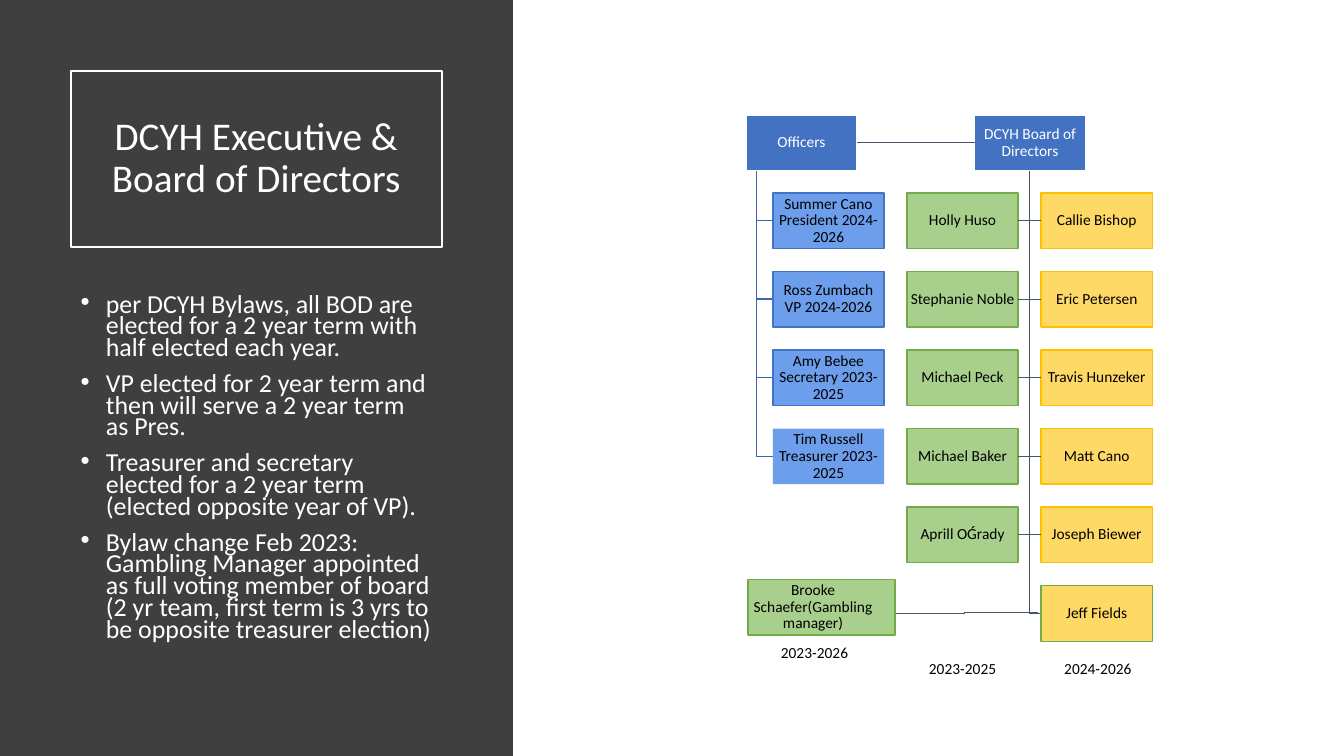
from lxml.etree import SubElement
from pptx import Presentation
from pptx.dml.color import RGBColor
from pptx.enum.shapes import MSO_CONNECTOR, MSO_SHAPE
from pptx.enum.text import MSO_ANCHOR, PP_ALIGN
from pptx.oxml.ns import qn
from pptx.util import Cm, Pt


def paint(shape, fill=None, line=None, weight=1):
    """Set fill, line and no shadow from hex strings; None means invisible."""
    if hasattr(shape, "fill"):
        shape.shadow.inherit = False
        if fill:
            shape.fill.solid()
            shape.fill.fore_color.rgb = RGBColor.from_string(fill)
        else:
            shape.fill.background()
    else:
        SubElement(shape._element.spPr, qn("a:effectLst"))
    if line:
        shape.line.color.rgb = RGBColor.from_string(line)
        shape.line.width = Pt(weight)
    else:
        shape.line.fill.background()


def write(shape, lines, size, color, align, spacing, inset):
    """Write one paragraph per line; inset is left, top, right, bottom in cm."""
    frame = shape.text_frame
    frame.word_wrap = True
    frame.margin_left, frame.margin_top, frame.margin_right, frame.margin_bottom = map(Cm, inset)
    for index, line in enumerate(lines):
        para = frame.add_paragraph() if index else frame.paragraphs[0]
        para.alignment = align
        para.line_spacing = spacing
        span = para.add_run()
        span.text = line
        span.font.name = "Calibri"
        span.font.size = Pt(size)
        span.font.color.rgb = RGBColor.from_string(color)
    return frame


deck = Presentation()
deck.slide_width, deck.slide_height = Cm(33.87), Cm(19.05)
page = deck.slides.add_slide(deck.slide_layouts[6])
shapes = page.shapes

# Left panel
panel = shapes.add_shape(MSO_SHAPE.RECTANGLE, 0, 0, Cm(12.93), deck.slide_height)
paint(panel, "3F3F3F")

title = shapes.add_shape(MSO_SHAPE.RECTANGLE, Cm(1.78), Cm(1.78), Cm(9.35), Cm(4.45))
paint(title, None, "FFFFFF", 1.5)
frame = write(title, ["DCYH Executive & Board of Directors"], 28, "FFFFFF",
              PP_ALIGN.CENTER, 0.9, (0.25, 0.13, 0.25, 0.13))
frame.vertical_anchor = MSO_ANCHOR.MIDDLE

rules = shapes.add_textbox(Cm(1.78), Cm(7.32), Cm(9.35), Cm(9.5))
frame = write(rules, [
    "per DCYH Bylaws, all BOD are elected for a 2 year term with half elected each year.",
    "VP elected for 2 year term and then will serve a 2 year term as Pres.",
    "Treasurer and secretary elected for a 2 year term (elected opposite year of VP).",
    "Bylaw change Feb 2023: Gambling Manager appointed as full voting member of board "
    "(2 yr team, first term is 3 yrs to be opposite treasurer election)",
], 18.5, "FFFFFF", PP_ALIGN.LEFT, 0.7, (0.25, 0.13, 0.25, 0.13))
for para in frame.paragraphs:
    para.space_before = Pt(10)
    props = para._p.get_or_add_pPr()
    props.set("marL", str(Cm(0.64)))
    props.set("indent", str(-Cm(0.64)))
    SubElement(SubElement(props, qn("a:buClr")), qn("a:srgbClr"), val="FFFFFF")
    SubElement(props, qn("a:buFont"), typeface="Arial")
    SubElement(props, qn("a:buChar"), char="•")

# Chart grid
CARD_WIDTH, CARD_HEIGHT = 2.8, 1.4
FIRST_ROW, ROW_STEP = 4.86, 1.98
HEAD_TOP = 2.9
HEAD_BOTTOM = HEAD_TOP + CARD_HEIGHT
OFFICERS_LEFT, GREEN_LEFT, AMBER_LEFT = 19.48, 22.86, 26.24
row_tops = [FIRST_ROW + ROW_STEP * row for row in range(6)]
row_middles = [top + CARD_HEIGHT / 2 for top in row_tops]

# Brackets hanging from the two heads
brackets = [(19.07, middle, OFFICERS_LEFT, "3A66B1", 1) for middle in row_middles[:4]]
brackets.append((25.95, row_middles[5], AMBER_LEFT, "44546A", 0.75))
for x, bottom, right, color, weight in brackets:
    builder = shapes.build_freeform(Cm(x), Cm(HEAD_BOTTOM))
    builder.add_line_segments([(Cm(x), Cm(bottom)), (Cm(right), Cm(bottom))], close=False)
    paint(builder.convert_to_shape(), None, color, weight)

manager_link = shapes.add_connector(MSO_CONNECTOR.ELBOW, Cm(22.45), Cm(15.46), Cm(26.16), Cm(15.43))
paint(manager_link, None, "44546A", 0.75)

# Cards: left, top, width, lines, fill, line, text colour
BLUE, GREEN, AMBER = ("6D9EEB", "4472C4"), ("A8D08C", "70AD47"), ("FFD966", "FFC000")
officers = [
    ["Summer Cano", "President 2024-2026"],
    ["Ross Zumbach", "VP 2024-2026"],
    ["Amy Bebee", "Secretary 2023-2025"],
    ["Tim Russell", "Treasurer 2023-2025"],
]
green_members = ["Holly Huso", "Stephanie Noble", "Michael Peck", "Michael Baker", "Aprill OǴrady"]
amber_members = ["Callie Bishop", "Eric Petersen", "Travis Hunzeker", "Matt Cano",
                 "Joseph Biewer", "Jeff Fields"]

cards = [
    (18.8, HEAD_TOP, CARD_WIDTH, ["Officers"], "4372C3", "FFFFFF", "FFFFFF"),
    (24.56, HEAD_TOP, CARD_WIDTH, ["DCYH Board of Directors"], "4372C3", "FFFFFF", "FFFFFF"),
    (18.85, 14.6, 3.71, ["Brooke Schaefer(Gambling manager)"], *GREEN, "000000"),
]
columns = [
    (OFFICERS_LEFT, officers, BLUE),
    (GREEN_LEFT, [[name] for name in green_members], GREEN),
    (AMBER_LEFT, [[name] for name in amber_members], AMBER),
]
for left, people, (fill, line) in columns:
    for top, lines in zip(row_tops, people):
        edge = {"Tim Russell": None, "Jeff Fields": "70AD47"}.get(lines[0], line)
        cards.append((left, top, CARD_WIDTH, lines, fill, edge, "000000"))

boxes = {}
for left, top, width, lines, fill, line, color in cards:
    box = shapes.add_shape(MSO_SHAPE.RECTANGLE, Cm(left), Cm(top), Cm(width), Cm(CARD_HEIGHT))
    paint(box, fill, line)
    inset = (0.12, 0.03, 0.55, 0.03) if width > CARD_WIDTH else (0.03,) * 4
    frame = write(box, lines, 11, color, PP_ALIGN.CENTER, 0.9, inset)
    frame.vertical_anchor = MSO_ANCHOR.MIDDLE
    boxes[lines[0]] = box

# Links between neighbouring cards
for start, end in [("Officers", "DCYH Board of Directors"), *zip(green_members, amber_members)]:
    link = shapes.add_connector(MSO_CONNECTOR.STRAIGHT, 0, 0, 0, 0)
    link.begin_connect(boxes[start], 3)
    link.end_connect(boxes[end], 1)
    paint(link, None, "44546A", 0.75)

# Terms below the columns
for left, top, term in [(19.43, 15.98, "2023-2026"), (23.16, 16.38, "2023-2025"),
                        (26.57, 16.38, "2024-2026")]:
    label = shapes.add_textbox(Cm(left), Cm(top), Cm(2.46), Cm(0.89))
    write(label, [term], 11, "000000", PP_ALIGN.LEFT, 1.0, (0.25,) * 4)

deck.save("out.pptx")
